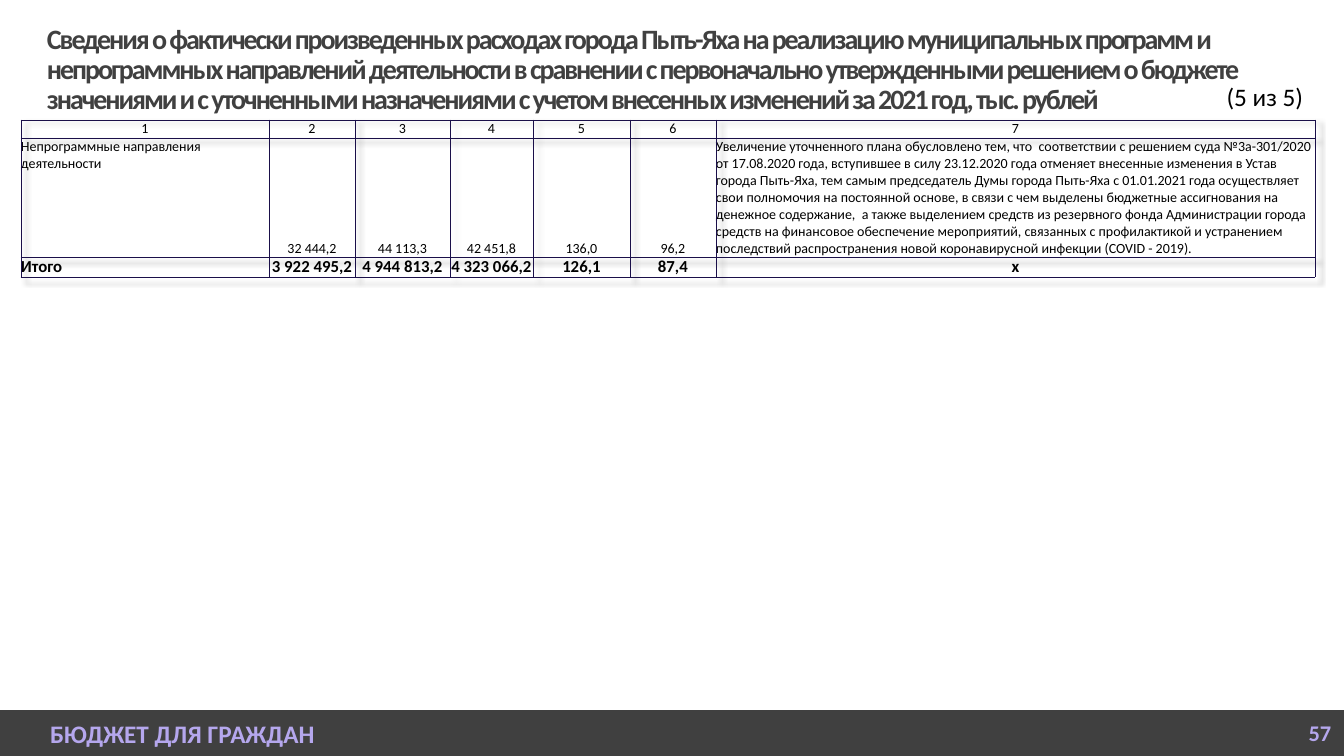
from dataclasses import dataclass

from lxml import etree
from pptx import Presentation
from pptx.dml.color import RGBColor
from pptx.enum.shapes import MSO_SHAPE
from pptx.enum.text import MSO_ANCHOR, PP_ALIGN
from pptx.oxml import parse_xml
from pptx.oxml.ns import qn
from pptx.util import Pt

RECTANGLE = MSO_SHAPE.RECTANGLE
TOP, MIDDLE, BOTTOM = MSO_ANCHOR.TOP, MSO_ANCHOR.MIDDLE, MSO_ANCHOR.BOTTOM
LEFT, CENTER, RIGHT = PP_ALIGN.LEFT, PP_ALIGN.CENTER, PP_ALIGN.RIGHT
DRAWING_NS = "http://schemas.openxmlformats.org/drawingml/2006/main"
EMU_PER_PX = 914400 / 100.8


@dataclass(frozen=True)
class Theme:
    font: str = "Calibri"
    dark: str = "404040"
    accent: str = "B5A7ED"
    black: str = "000000"
    border: str = "1A0F49"
    title_size: int = 20
    label_size: int = 18
    page_size: int = 16
    total_size: int = 12
    body_size: int = 10


THEME = Theme()

TITLE = (
    "Сведения о фактически произведенных расходах города Пыть-Яха на реализацию "
    "муниципальных программ и непрограммных направлений деятельности в сравнении с "
    "первоначально утвержденными решением о бюджете значениями и с уточненными "
    "назначениями с учетом внесенных изменений за 2021 год, тыс. рублей"
)
EXPLANATION = (
    "Увеличение уточненного плана обусловлено тем, что  соответствии с решением суда "
    "№3а-301/2020 от 17.08.2020 года, вступившее в силу 23.12.2020 года отменяет "
    "внесенные изменения в Устав города Пыть-Яха, тем самым председатель Думы города "
    "Пыть-Яха с 01.01.2021 года осуществляет свои полномочия на постоянной основе, "
    "в связи с чем выделены бюджетные ассигнования на денежное содержание,  а также "
    "выделением средств из резервного фонда Администрации города средств на "
    "финансовое обеспечение мероприятий, связанных с профилактикой и устранением "
    "последствий распространения новой коронавирусной инфекции (COVID - 2019)."
)
BUDGET_ROWS = [
    ["1", "2", "3", "4", "5", "6", "7"],
    ["Непрограммные направления деятельности", "32 444,2", "44 113,3", "42 451,8",
     "136,0", "96,2", EXPLANATION],
    ["Итого", "3 922 495,2", "4 944 813,2", "4 323 066,2", "126,1", "87,4", "х"],
]
COLUMN_WIDTHS = [248, 86, 95, 83, 97, 86, 599]
ROW_HEIGHTS = [18, 119, 20]
HEADER, PROGRAM, TOTAL = range(3)
NAME_COLUMN, NOTE_COLUMN = 0, 6


def px(length):
    return round(length * EMU_PER_PX)


def write(frame, text, size, color, bold=False, align=LEFT, spacing=None):
    frame.text = text
    frame.word_wrap = True
    paragraph = frame.paragraphs[0]
    paragraph.alignment = align
    run = paragraph.runs[0]
    run.font.name = THEME.font
    run.font.size = Pt(size)
    run.font.bold = bold
    run.font.color.rgb = RGBColor.from_string(color)
    if spacing is not None:
        run.font._element.set("spc", str(spacing))


def clear_margins(target, left=0):
    target.margin_left = px(left)
    target.margin_right = target.margin_top = target.margin_bottom = 0


def add_text(slide, box, text, size, color, **style):
    frame = slide.shapes.add_textbox(*map(px, box)).text_frame
    write(frame, text, size, color, **style)
    return frame


def add_footer_block(slide, box, text, size, align, indent=0):
    block = slide.shapes.add_shape(RECTANGLE, *map(px, box))
    block.shadow.inherit = False
    block.fill.solid()
    block.fill.fore_color.rgb = RGBColor.from_string(THEME.dark)
    block.line.fill.background()
    frame = block.text_frame
    clear_margins(frame, indent)
    frame.vertical_anchor = MIDDLE
    write(frame, text, size, THEME.accent, bold=True, align=align)


def add_borders(cell):
    properties = cell._tc.get_or_add_tcPr()
    for position, side in enumerate(("lnL", "lnR", "lnT", "lnB")):
        line = etree.Element(qn(f"a:{side}"), w=str(Pt(0.5)))
        fill = etree.SubElement(line, qn("a:solidFill"))
        etree.SubElement(fill, qn("a:srgbClr"), val=THEME.border)
        properties.insert(position, line)


def cell_layout(row, column):
    if column == NOTE_COLUMN:
        return (LEFT if row == PROGRAM else CENTER), MIDDLE
    if row == HEADER:
        return CENTER, MIDDLE
    if column == NAME_COLUMN:
        return LEFT, (TOP if row == PROGRAM else BOTTOM)
    return CENTER, BOTTOM


def add_budget_table(slide, left, top):
    frame = slide.shapes.add_table(
        len(ROW_HEIGHTS), len(COLUMN_WIDTHS), px(left), px(top),
        px(sum(COLUMN_WIDTHS)), px(sum(ROW_HEIGHTS)))
    table = frame.table
    table.first_row = table.horz_banding = False
    for column, width in zip(table.columns, COLUMN_WIDTHS):
        column.width = px(width)
    for row, height in zip(table.rows, ROW_HEIGHTS):
        row.height = px(height)

    # Soft shadow behind the grid
    table._tbl.tblPr.insert(0, parse_xml(
        f'<a:effectLst xmlns:a="{DRAWING_NS}">'
        '<a:outerShdw blurRad="50800" dist="50800" dir="2700000">'
        '<a:srgbClr val="000000"><a:alpha val="30000"/></a:srgbClr>'
        '</a:outerShdw></a:effectLst>'))

    # Cell contents
    for row, values in enumerate(BUDGET_ROWS):
        is_total = row == TOTAL
        size = THEME.total_size if is_total else THEME.body_size
        for column, value in enumerate(values):
            cell = table.cell(row, column)
            align, anchor = cell_layout(row, column)
            clear_margins(cell)
            cell.vertical_anchor = anchor
            cell.fill.background()
            write(cell.text_frame, value, size, THEME.black, is_total, align)
            add_borders(cell)


def main():
    deck = Presentation()
    deck.slide_width, deck.slide_height = px(1344), px(756)
    slide = deck.slides.add_slide(deck.slide_layouts[6])

    # Footer
    add_footer_block(slide, (0, 710, 1296, 46), "БЮДЖЕТ ДЛЯ ГРАЖДАН",
                     THEME.label_size, LEFT, indent=50)
    add_footer_block(slide, (1296, 710, 48, 46), "57", THEME.page_size, CENTER)

    # Title
    title = add_text(slide, (47, 47, 1249, 47), TITLE, THEME.title_size,
                     THEME.dark, bold=True, spacing=-150)
    clear_margins(title)
    title.vertical_anchor = MIDDLE
    title.paragraphs[0].line_spacing = 0.9

    # Budget table and its part number
    add_budget_table(slide, 21, 120)
    add_text(slide, (1199, 76, 114, 40), "(5 из 5)", THEME.label_size,
             THEME.black, align=RIGHT)

    deck.save("out.pptx")


if __name__ == "__main__":
    main()
